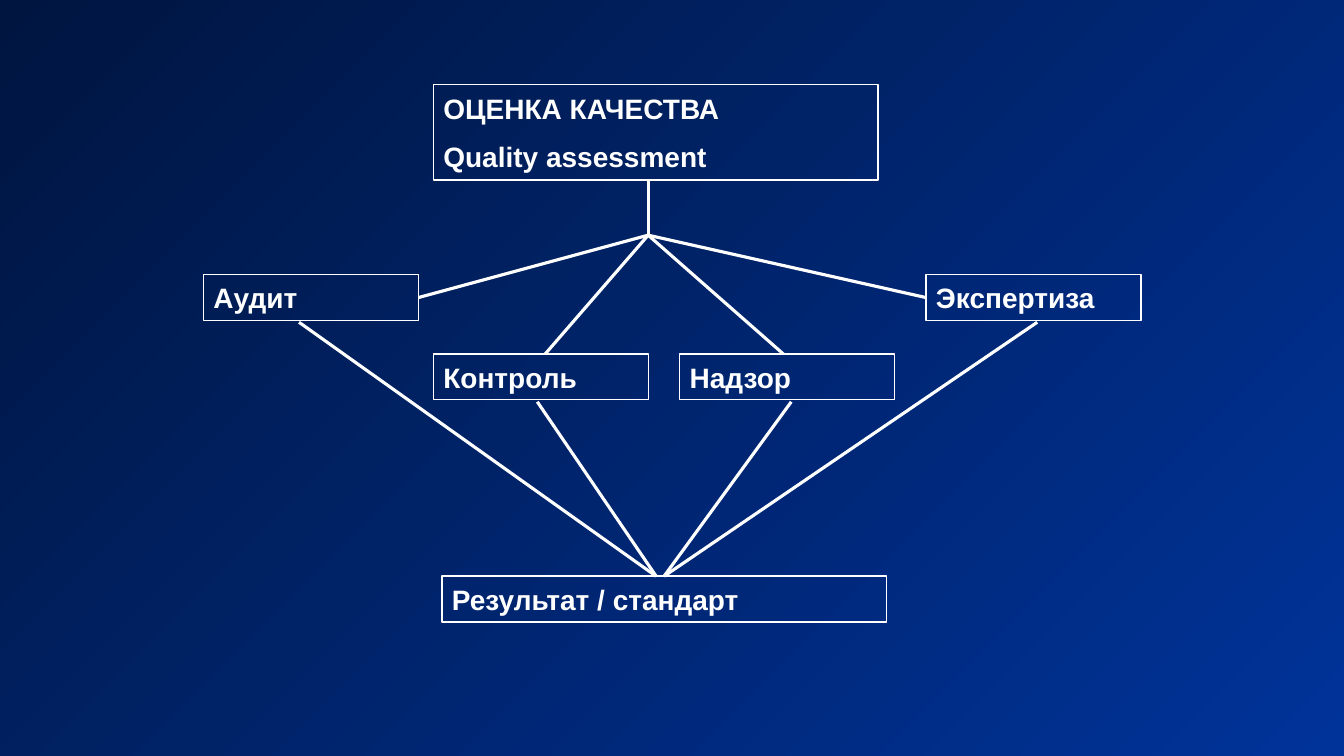
from dataclasses import dataclass

from lxml.etree import SubElement
from pptx import Presentation
from pptx.dml.color import RGBColor
from pptx.enum.shapes import MSO_CONNECTOR as CONNECTOR, MSO_SHAPE as SHAPE
from pptx.enum.text import MSO_ANCHOR as ANCHOR, PP_ALIGN as ALIGN
from pptx.oxml.ns import qn
from pptx.util import Pt


@dataclass(frozen=True)
class Theme:
    """Colours, font and sizes of the slide."""
    dark: RGBColor = RGBColor(0x00, 0x15, 0x40)
    blue: RGBColor = RGBColor(0x00, 0x33, 0x99)
    white: RGBColor = RGBColor(0xFF, 0xFF, 0xFF)
    font: str = "Arial"
    size: float = 20
    gap: float = 10.5
    border: float = 1
    link: float = 2.25


THEME = Theme()
WIDE, NARROW, ROW = 317.5, 153.5, 32.7
TOP, RIGHT, LEFT = 0, 3, 1


def paint_background(slide):
    """Fill the slide with a diagonal blue gradient."""
    fill = slide.background.fill
    fill.gradient()
    fill.gradient_angle = 315
    for stop, color, position in zip(fill.gradient_stops, (THEME.dark, THEME.blue), (0, 1)):
        stop.color.rgb = color
        stop.position = position


def add_box(slide, x, y, width, height, *lines):
    """Draw an outlined box holding one bold paragraph per line."""
    sp = slide.shapes.add_shape(SHAPE.RECTANGLE, Pt(x), Pt(y), Pt(width), Pt(height))
    sp.shadow.inherit = False
    sp.fill.background()
    sp.line.color.rgb = THEME.white
    sp.line.width = Pt(THEME.border)
    tf = sp.text_frame
    tf.word_wrap = True
    tf.vertical_anchor = ANCHOR.MIDDLE
    tf.text = "\n".join(lines)
    for i, p in enumerate(tf.paragraphs):
        p.alignment = ALIGN.LEFT
        p.space_before = Pt(THEME.gap if i else 0)
        font = p.runs[0].font
        font.name = THEME.font
        font.size = Pt(THEME.size)
        font.bold = True
        font.color.rgb = THEME.white
    return sp


def add_link(slide, start, end, box=None, side=TOP):
    """Draw a white line and join its end to a box side when one is given."""
    line = slide.shapes.add_connector(CONNECTOR.STRAIGHT, *map(Pt, (*start, *end)))
    line.line.color.rgb = THEME.white
    line.line.width = Pt(THEME.link)
    SubElement(line._element.spPr, qn("a:effectLst"))
    if box is not None:
        line.end_connect(box, side)


def main():
    """Build the quality assessment diagram and save it."""
    prs = Presentation()
    prs.slide_width, prs.slide_height = Pt(960), Pt(540)
    slide = prs.slides.add_slide(prs.slide_layouts[6])
    paint_background(slide)

    add_box(slide, 309.6, 60.2, WIDE, 68.4, "ОЦЕНКА КАЧЕСТВА", "Quality assessment")
    audit = add_box(slide, 145.4, 196.2, NARROW, ROW, "Аудит")
    add_box(slide, 309.6, 252.8, NARROW, ROW, "Контроль")
    add_box(slide, 485.5, 252.8, NARROW, ROW, "Надзор")
    expertise = add_box(slide, 661.4, 196.2, NARROW, ROW, "Экспертиза")
    result = add_box(slide, 315.6, 411.6, WIDE, ROW, "Результат / стандарт")

    hub = (463, 168)
    add_link(slide, (463, 128.6), hub)
    add_link(slide, hub, (298.9, 212.6), audit, RIGHT)
    add_link(slide, hub, (661.4, 212.6), expertise, LEFT)
    for x in (389.5, 559.5):
        add_link(slide, hub, (x, 252.8))

    for x, y in ((213.6, 230.2), (383.8, 287)):
        add_link(slide, (x, y), (468.7, 411.6))
    for x, y in ((740.9, 230.2), (565.2, 287)):
        add_link(slide, (x, y), (474.4, 411.6), result, TOP)

    prs.save("out.pptx")


if __name__ == "__main__":
    main()
